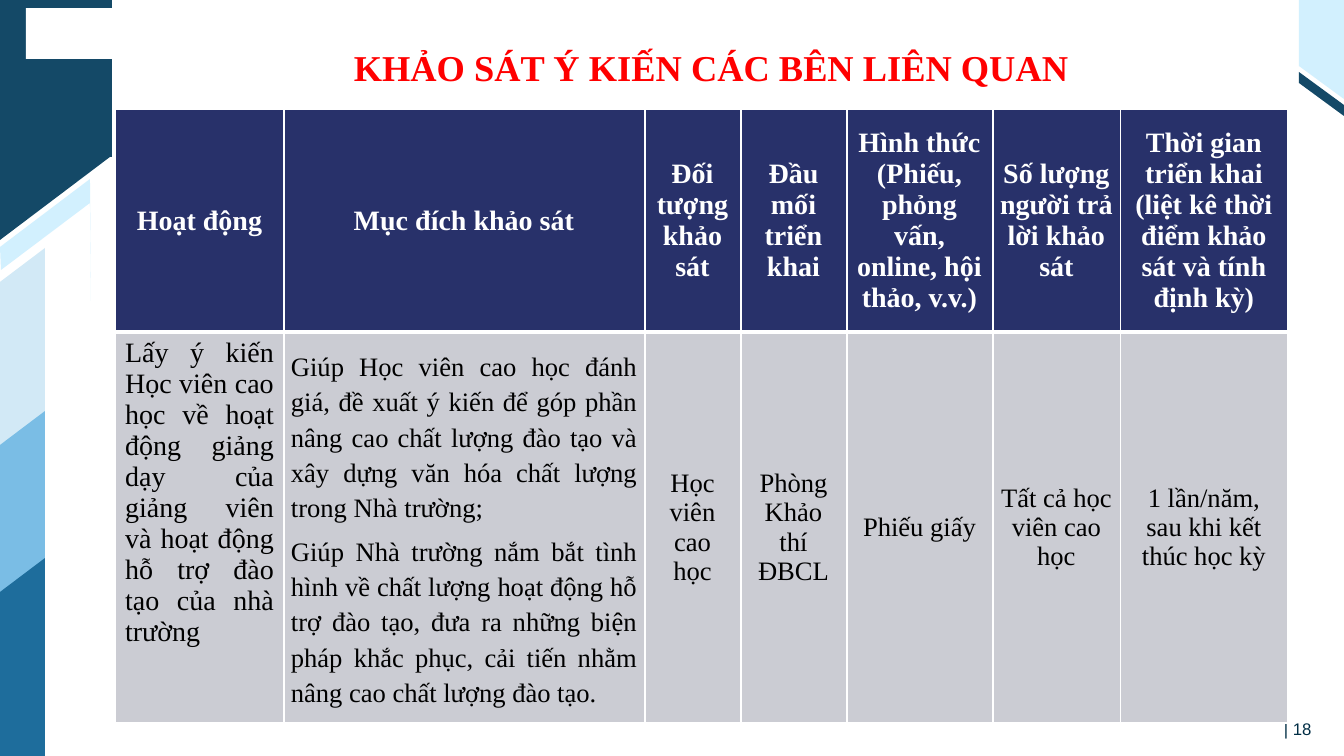
import pptx
import pptx.util
import pptx.dml.color
import pptx.enum.shapes
import pptx.enum.text
import pptx.oxml
import pptx.oxml.ns

SCALE = 914400 / 100.8
ALIGN = pptx.enum.text.PP_ALIGN
MIDDLE = pptx.enum.text.MSO_ANCHOR.MIDDLE
TOP = pptx.enum.text.MSO_ANCHOR.TOP
RGB = pptx.dml.color.RGBColor.from_string

theme = {
    "serif": "Times New Roman", "sans": "Arial",
    "title": 26, "head": 20, "body": 19, "page": 12,
    "white": "FFFFFF", "black": "000000", "red": "FF0000", "ink": "012E45",
    "navy": "28316A", "grey": "CBCCD3",
    "deep": "144967", "pale": "D2F0FE", "mist": "D2E9F6",
    "sky": "7ABDE5", "blue": "1E6D9C",
}


def px(*sizes):
    """Turn pixel lengths into a list of EMU lengths."""
    return [pptx.util.Emu(round(size * SCALE)) for size in sizes]


def write(frame, text, size, color, font="serif", bold=False,
          align=ALIGN.CENTER, line=None, gap=0):
    """Fill a text frame, one paragraph per line of text."""
    frame.word_wrap = True
    for i, part in enumerate(text.split("\n")):
        para = frame.paragraphs[0] if i == 0 else frame.add_paragraph()
        para.alignment = align
        if line:
            para.line_spacing = line
        if gap:
            para.space_after = pptx.util.Pt(gap)
            if i:
                para.space_before = pptx.util.Pt(gap)
        run = para.add_run()
        run.text = part
        run.font.name = theme[font]
        run.font.size = pptx.util.Pt(theme[size])
        run.font.bold = bold
        run.font.color.rgb = RGB(theme[color])


deck = pptx.Presentation()
deck.slide_width, deck.slide_height = px(1344, 756)
slide = deck.slides.add_slide(deck.slide_layouts[6])
shapes = slide.shapes

# Side decoration
panels = [
    ("deep", [(0, 0), (112, 0), (112, 157), (110, 157), (0, 240)]),
    ("pale", [(90, 179), (91, 301), (90, 203), (1, 270), (0, 247)]),
    ("deep", [(1299, 72), (1344, 105), (1344, 116), (1299, 83)]),
    ("pale", [(1299, 0), (1344, 0), (1344, 99), (1299, 66)]),
]
for color, top in [("mist", 248), ("sky", 411), ("blue", 558)]:
    panels.append((color, [(45, top), (45, top + 198), (0, top + 198), (0, top + 34)]))

marks = []
for color, points in panels:
    outline = shapes.build_freeform(*points[0], scale=SCALE)
    outline.add_line_segments(points[1:], close=True)
    marks.append((color, outline.convert_to_shape()))
block = shapes.add_shape(pptx.enum.shapes.MSO_SHAPE.RECTANGLE, *px(26, 8, 180, 51))
marks.append(("white", block))
for color, mark in marks:
    mark.shadow.inherit = False
    mark.fill.solid()
    mark.fill.fore_color.rgb = RGB(theme[color])
    mark.line.fill.background()

# Title and page number
title = shapes.add_textbox(*px(146, 24, 1131, 85)).text_frame
title.vertical_anchor = MIDDLE
write(title, "KHẢO SÁT Ý KIẾN CÁC BÊN LIÊN QUAN", "title", "red", bold=True)

page = shapes.add_textbox(*px(1277, 714, 67, 30)).text_frame
page.margin_left = px(7)[0]
write(page, "| 18", "page", "ink", font="sans", align=ALIGN.LEFT)

# Survey table
heads = [
    "Hoạt động",
    "Mục đích khảo sát",
    "Đối tượng khảo sát",
    "Đầu mối triển khai",
    "Hình thức (Phiếu, phỏng vấn, online, hội thảo, v.v.)",
    "Số lượng người trả lời khảo sát",
    "Thời gian triển khai\n(liệt kê thời điểm khảo sát và tính định kỳ)",
]
survey = [
    "Lấy ý kiến Học viên cao học về hoạt động giảng dạy của giảng viên "
    "và hoạt động hỗ trợ đào tạo của nhà trường",
    "Giúp Học viên cao học đánh giá, đề xuất ý kiến để góp phần nâng cao "
    "chất lượng đào tạo và xây dựng văn hóa chất lượng trong Nhà trường;\n"
    "Giúp Nhà trường nắm bắt tình hình về chất lượng hoạt động hỗ trợ đào tạo, "
    "đưa ra những biện pháp khắc phục, cải tiến nhằm nâng cao chất lượng đào tạo.",
    "Học viên cao học",
    "Phòng Khảo thí ĐBCL",
    "Phiếu giấy",
    "Tất cả học viên cao học",
    "1 lần/năm, sau khi kết thúc học kỳ",
]
widths = px(169, 361, 96, 106, 146, 128, 167)
heights = px(223, 381)
table = shapes.add_table(2, 7, *px(115, 109), sum(widths), sum(heights)).table
table.horz_banding = False
for col, width in zip(table.columns, widths):
    col.width = width
for row, height in zip(table.rows, heights):
    row.height = height

for r, texts in enumerate([heads, survey]):
    for c, text in enumerate(texts):
        cell = table.cell(r, c)
        cell.fill.solid()
        cell.fill.fore_color.rgb = RGB(theme["grey" if r else "navy"])
        cell.vertical_anchor = MIDDLE
        if c:
            cell.margin_left, cell.margin_right, cell.margin_top, cell.margin_bottom = px(7, 8, 0, 0)
        form = {"size": "body", "color": "black"}
        if r == 0:
            form = {"size": "head", "color": "white", "bold": True}
        elif c == 0:
            cell.vertical_anchor = TOP
            form.update(size="head", align=ALIGN.JUSTIFY)
        elif c == 1:
            form.update(align=ALIGN.JUSTIFY, line=1.2, gap=3)
        write(cell.text_frame, text, **form)

        props = cell._tc.get_or_add_tcPr()
        for i, side in enumerate("LRTB"):
            weight = pptx.util.Pt(3 if r == 0 and side == "B" else 1)
            edge = pptx.oxml.parse_xml(
                f'<a:ln{side} {pptx.oxml.ns.nsdecls("a")} w="{weight}"><a:solidFill>'
                f'<a:srgbClr val="{theme["white"]}"/></a:solidFill></a:ln{side}>')
            props.insert(i, edge)

deck.save("out.pptx")
